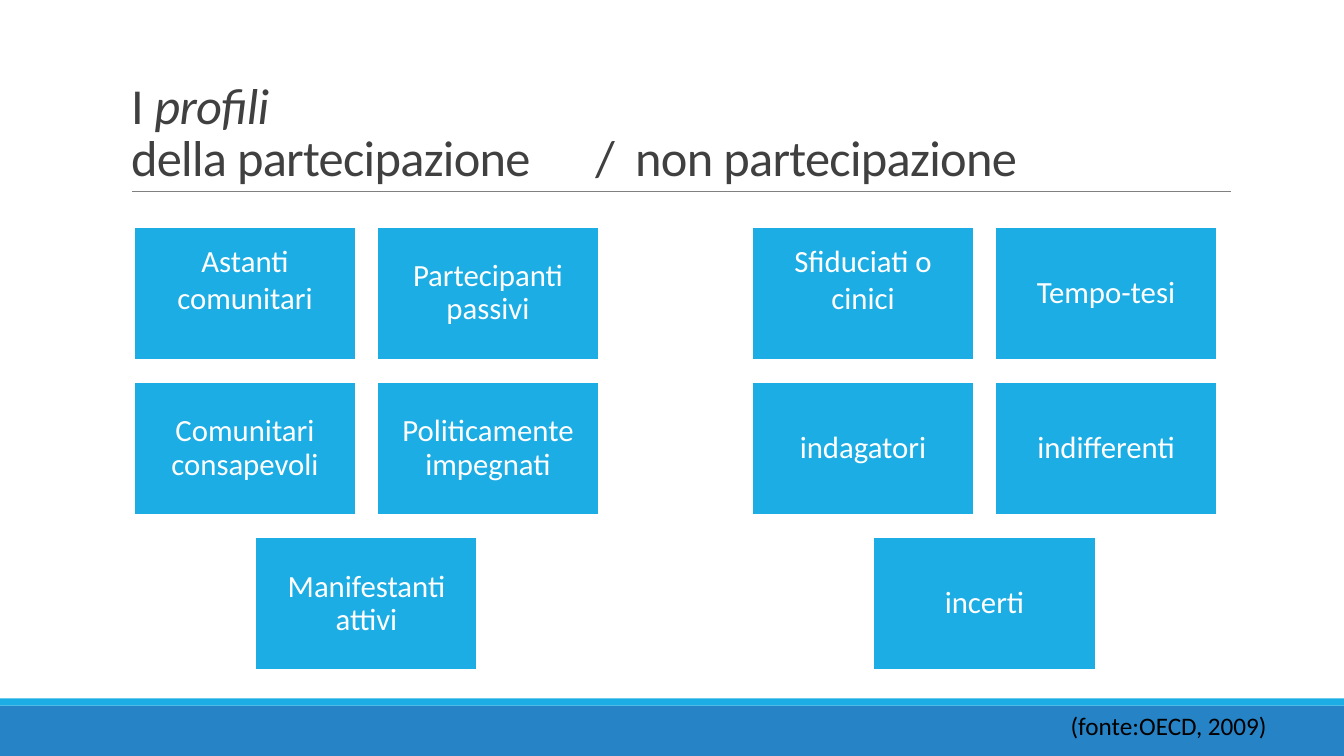
from pptx import Presentation
from pptx import util as u
from pptx.dml.color import RGBColor
from pptx.enum import shapes, text

COLORS = {"blue": "2683C6", "cyan": "1CADE4", "rule": "808080",
          "title": "404040", "white": "FFFFFF", "black": "000000"}
FONT = "Calibri"


def color(name):
    return RGBColor.from_string(COLORS[name])


def add_rect(left, top, width, height, fill):
    box = page.shapes.add_shape(shapes.MSO_SHAPE.RECTANGLE, u.Inches(left),
                                u.Inches(top), u.Inches(width), u.Inches(height))
    box.shadow.inherit = False
    box.fill.solid()
    box.fill.fore_color.rgb = color(fill)
    box.line.fill.background()
    return box


deck = Presentation()
deck.slide_width, deck.slide_height = u.Inches(13.33), u.Inches(7.5)
page = deck.slides.add_slide(deck.slide_layouts[5])

# Footer bands and rule under the title
add_rect(0, 7, 13.33, 0.5, "blue")
add_rect(0, 6.93, 13.33, 0.07, "cyan")
rule = page.shapes.add_connector(shapes.MSO_CONNECTOR.STRAIGHT, u.Inches(1.31),
                                 u.Inches(1.9), u.Inches(12.21), u.Inches(1.9))
rule.line.color.rgb = color("rule")
rule.line.width = u.Pt(0.5)
rule_props = rule._element.spPr
rule_props.append(rule_props.makeelement(
    "{http://schemas.openxmlformats.org/drawingml/2006/main}effectLst", {}))

# Title
title = page.shapes.title
title.left, title.top = u.Inches(1.2), u.Inches(0.31)
title.width, title.height = u.Inches(11), u.Inches(1.59)
frame = title.text_frame
frame.auto_size = text.MSO_AUTO_SIZE.NONE
frame.vertical_anchor = text.MSO_ANCHOR.BOTTOM
para = frame.paragraphs[0]
para.alignment = text.PP_ALIGN.LEFT
para.line_spacing = 0.85
para.font.name, para.font.size = FONT, u.Pt(36)
para.font.color.rgb = color("title")
for words, italic in (("I ", False), ("profili ", True), (None, False),
                      ("della partecipazione \t / \tnon partecipazione", False)):
    if words is None:
        para.add_line_break()
        continue
    span = para.add_run()
    span.text = words
    span.font.italic = italic
    span.font._element.set("spc", "-50")

# Two groups of profiles: two full rows, then one centred box
BOX_W, BOX_H, COL_STEP, ROW_STEP, TOP, INSET = 2.2, 1.32, 2.41, 1.54, 2.25, 0.09
CELLS = [(0, 0), (1, 0), (0, 1), (1, 1), (0.5, 2)]
GROUPS = {
    1.33: ["Astanti comunitari", "Partecipanti passivi", "Comunitari consapevoli",
           "Politicamente impegnati", "Manifestanti attivi"],
    7.46: ["Sfiduciati o cinici", "Tempo-tesi", "indagatori", "indifferenti", "incerti"],
}
for left, profiles in GROUPS.items():
    for index, (profile, (col, row)) in enumerate(zip(profiles, CELLS)):
        box = add_rect(left + col * COL_STEP, TOP + row * ROW_STEP, BOX_W, BOX_H, "cyan")
        box.line.color.rgb = color("white")
        box.line.width = u.Pt(1.25)
        frame = box.text_frame
        frame.word_wrap = True
        frame.vertical_anchor = text.MSO_ANCHOR.MIDDLE
        frame.margin_left = frame.margin_right = frame.margin_top = u.Inches(INSET)
        # The first profile of each group sits higher, with looser lines
        frame.margin_bottom = u.Inches(INSET + (0.3 if index == 0 else 0))
        para = frame.paragraphs[0]
        para.text = profile
        para.alignment = text.PP_ALIGN.CENTER
        para.line_spacing = 1.0 if index == 0 else 0.9
        para.font.name, para.font.size = FONT, u.Pt(22)
        para.font.color.rgb = color("white")

# Citation
citation = page.shapes.add_textbox(u.Inches(10.52), u.Inches(7), u.Inches(2.17), u.Inches(0.4))
citation.text_frame.word_wrap = False
citation.text_frame.auto_size = text.MSO_AUTO_SIZE.SHAPE_TO_FIT_TEXT
para = citation.text_frame.paragraphs[0]
para.text = "(fonte:OECD, 2009)"
para.font.name, para.font.size = FONT, u.Pt(18)
para.font.color.rgb = color("black")

deck.save("out.pptx")
